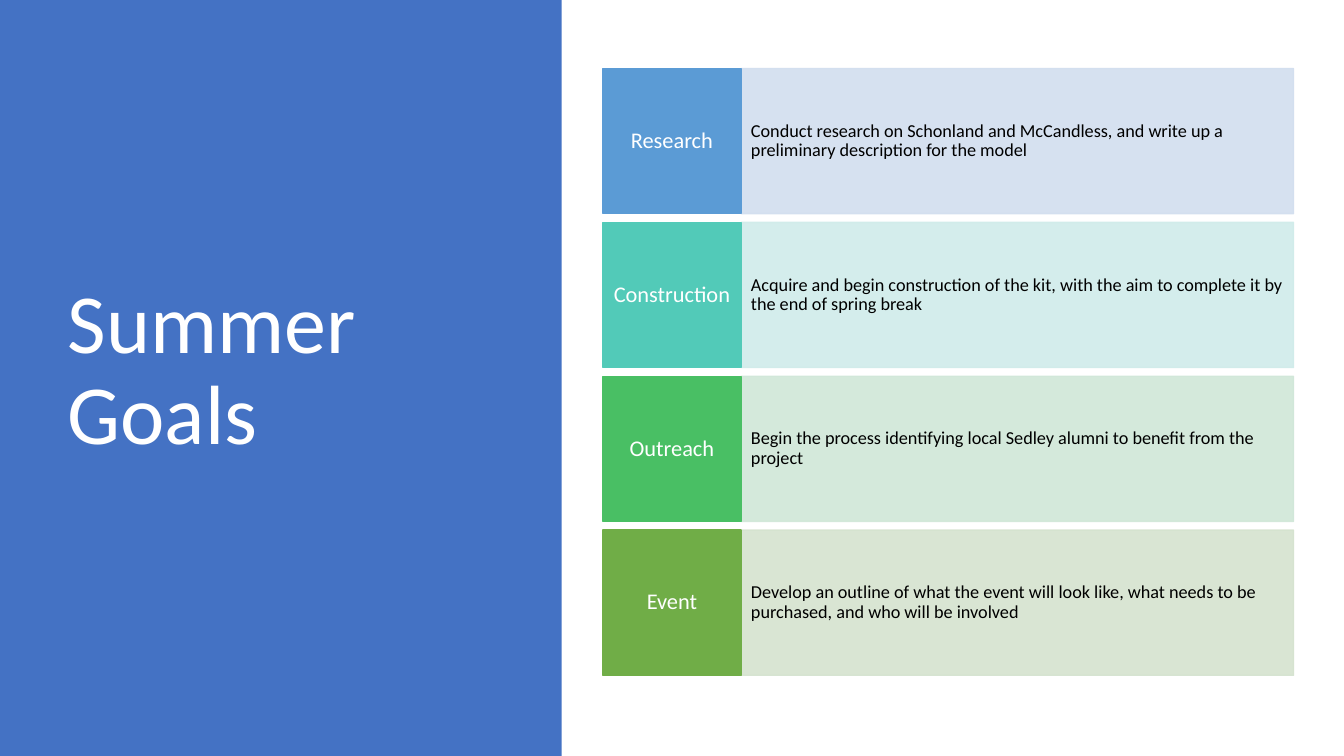
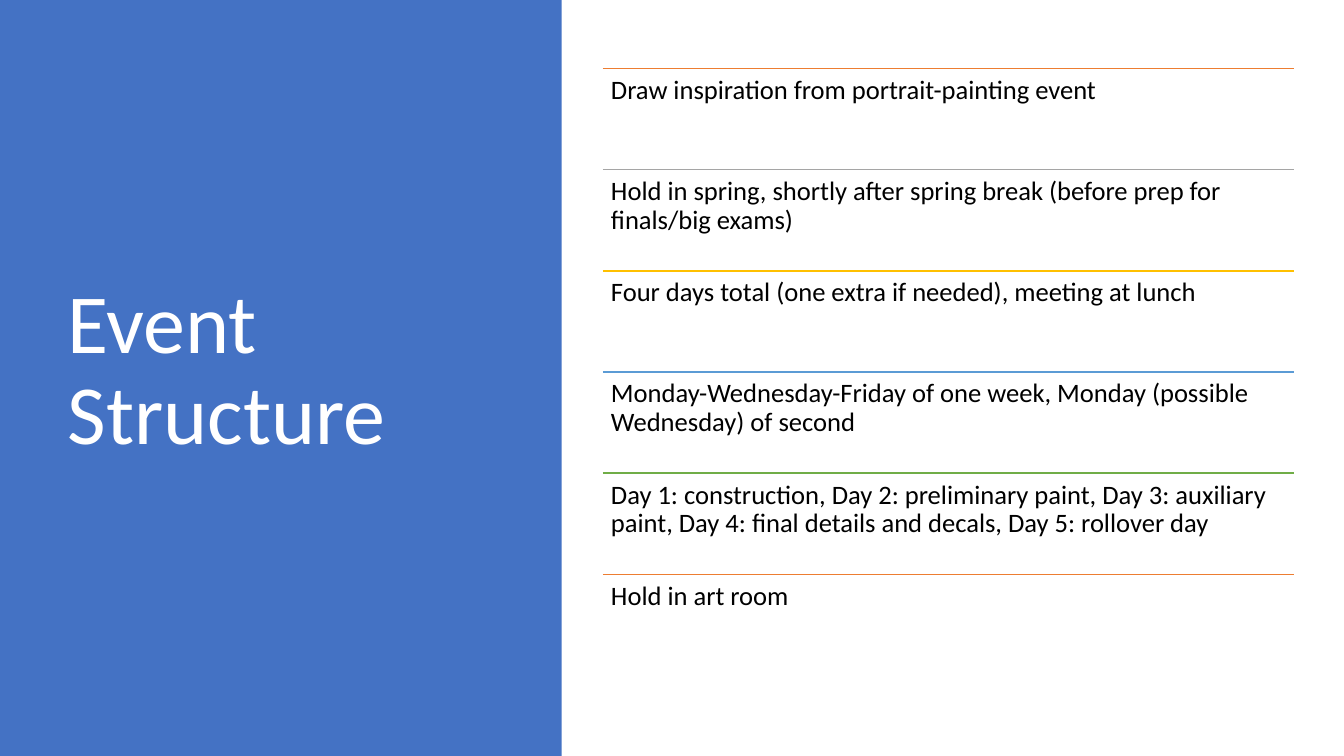
from lxml import etree
from pptx import Presentation
from pptx.dml.color import RGBColor
from pptx.enum.shapes import MSO_CONNECTOR, MSO_SHAPE
from pptx.enum.text import MSO_ANCHOR, MSO_AUTO_SIZE, PP_ALIGN
from pptx.oxml.ns import qn
from pptx.util import Inches, Pt

RECT = MSO_SHAPE.RECTANGLE
LINE = MSO_CONNECTOR.STRAIGHT
TOP, MIDDLE = MSO_ANCHOR.TOP, MSO_ANCHOR.MIDDLE
LEFT, CENTER = PP_ALIGN.LEFT, PP_ALIGN.CENTER
FIXED = MSO_AUTO_SIZE.NONE

FONT = "Calibri"
HEX = {
    "panel": "4472C4", "white": "FFFFFF", "black": "000000",
    "blue": "5B9BD5", "teal": "52CAB8", "mint": "49BF64", "green": "70AD47",
    "pale blue": "D2DEEF", "pale teal": "D0ECEA",
    "pale mint": "D0E7D8", "pale green": "D5E3CF",
    "orange": "ED7D31", "gray": "A5A5A5", "gold": "FFC000",
}
RGB = {name: RGBColor.from_string(code) for name, code in HEX.items()}

X, Y, WIDTH, HEIGHT = 5.98, 0.68, 6.85, 6.02


def write(shape, text, size, color, align=LEFT, anchor=MIDDLE, pad=(0.1, 0.05)):
    frame = shape.text_frame
    frame.word_wrap = True
    frame.auto_size = FIXED
    frame.vertical_anchor = anchor
    frame.margin_left = frame.margin_right = Inches(pad[0])
    frame.margin_top = frame.margin_bottom = Inches(pad[1])
    frame.text = text
    para = frame.paragraphs[0]
    para.alignment = align
    para.line_spacing = 0.9
    para.font.name = FONT
    para.font.size = Pt(size)
    para.font.color.rgb = RGB[color]


def block(slide, x, y, w, h, color, alpha=100):
    shape = slide.shapes.add_shape(RECT, Inches(x), Inches(y), Inches(w), Inches(h))
    shape.shadow.inherit = False
    shape.fill.solid()
    shape.fill.fore_color.rgb = RGB[color]
    shape.line.color.rgb = RGB[color]
    shape.line.width = Pt(1)
    if alpha < 100:
        for tint in shape.element.spPr.iter(qn("a:srgbClr")):
            etree.SubElement(tint, qn("a:alpha"), val=str(alpha * 1000))
    return shape


deck = Presentation()
deck.slide_width, deck.slide_height = Inches(13.33), Inches(7.5)

slides = []
for head in ["Summer Goals", "Event Structure"]:
    slide = deck.slides.add_slide(deck.slide_layouts[5])
    title = slide.shapes.title
    title.left, title.top = Inches(0.57), Inches(Y)
    title.width, title.height = Inches(4.16), Inches(HEIGHT)
    write(title, head, 60, "white")
    panel = block(slide, 0, 0, 5.57, 7.5, "panel")
    panel.line.fill.background()
    title.element.addprevious(panel.element)
    slides.append(slide)

goals, event = slides

rows = [
    ("Research", "blue",
     "Conduct research on Schonland and McCandless, and write up a preliminary description for the model"),
    ("Construction", "teal",
     "Acquire and begin construction of the kit, with the aim to complete it by the end of spring break"),
    ("Outreach", "mint",
     "Begin the process identifying local Sedley alumni to benefit from the project"),
    ("Event", "green",
     "Develop an outline of what the event will look like, what needs to be purchased, and who will be involved"),
]
tag_w, row_h = 1.37, 1.44
step = (HEIGHT - row_h) / (len(rows) - 1)
for i, (label, color, text) in enumerate(rows):
    y = Y + i * step
    body = block(goals, X + tag_w, y, WIDTH - tag_w, row_h, "pale " + color, 90)
    write(body, text, 13, "black", pad=(0.1, 0.37))
    tag = block(goals, X, y, tag_w, row_h, color)
    write(tag, label, 16, "white", CENTER, pad=(0.07, 0.14))

items = [
    ("orange", "Draw inspiration from portrait-painting event"),
    ("gray", "Hold in spring, shortly after spring break (before prep for finals/big exams)"),
    ("gold", "Four days total (one extra if needed), meeting at lunch"),
    ("blue", "Monday-Wednesday-Friday of one week, Monday (possible Wednesday) of second"),
    ("green", "Day 1: construction, Day 2: preliminary paint, Day 3: auxiliary paint, "
              "Day 4: final details and decals, Day 5: rollover day"),
    ("orange", "Hold in art room"),
]
step = HEIGHT / len(items)
for i, (color, text) in enumerate(items):
    y = Inches(Y + i * step)
    rule = event.shapes.add_connector(LINE, Inches(X), y, Inches(X + WIDTH), y)
    rule.line.color.rgb = RGB[color]
    rule.line.width = Pt(1)
    etree.SubElement(rule.element.spPr, qn("a:effectLst"))
    box = event.shapes.add_textbox(Inches(X), y, Inches(WIDTH), Inches(step))
    write(box, text, 19, "black", anchor=TOP, pad=(0.08, 0.08))

deck.save("out.pptx")
